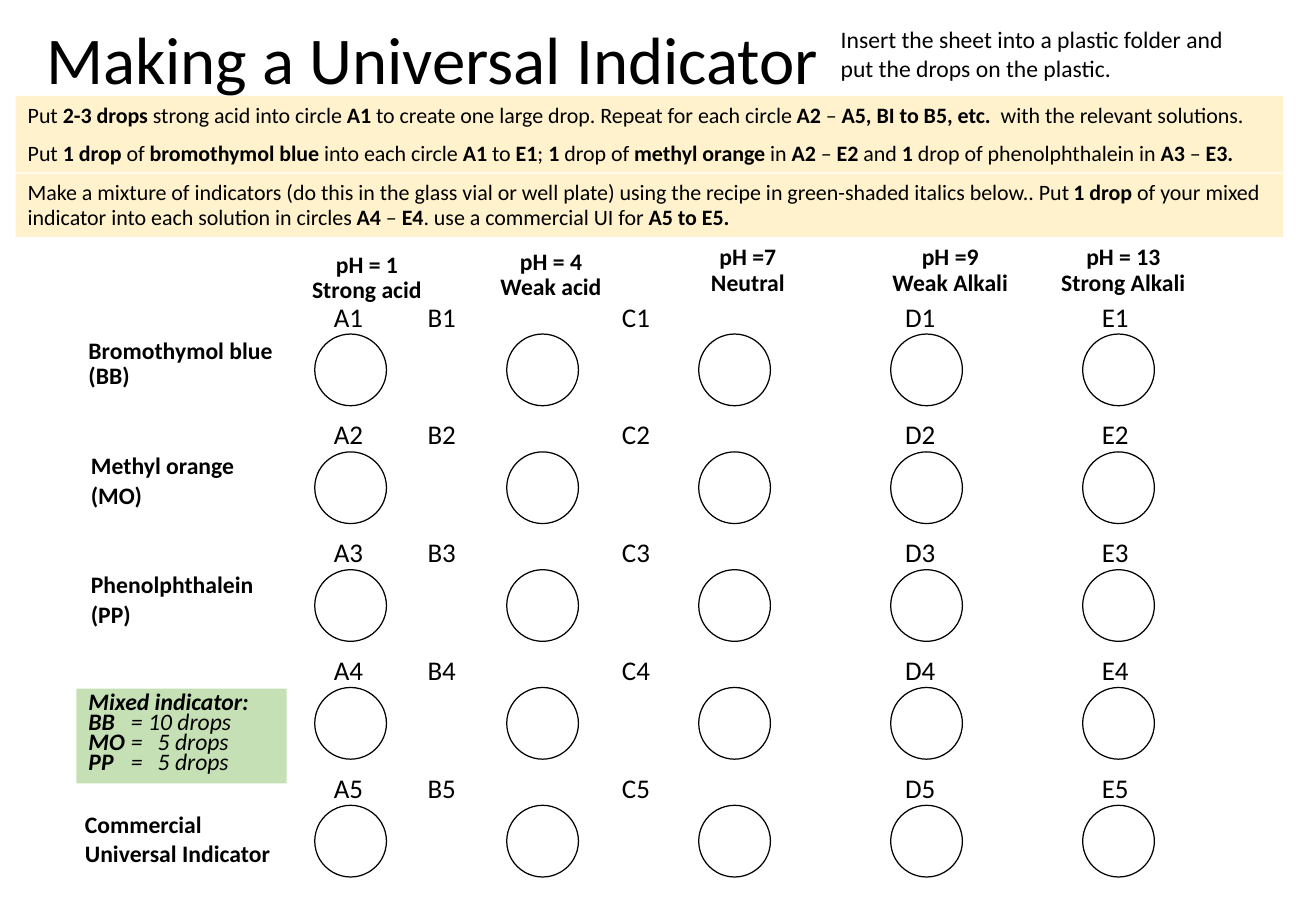
from lxml import etree
from pptx import Presentation
from pptx.dml.color import RGBColor
from pptx.enum.shapes import MSO_SHAPE as Shape
from pptx.enum.text import MSO_ANCHOR as Anchor, MSO_AUTO_SIZE as AutoSize, PP_ALIGN as Align
from pptx.oxml.ns import qn
from pptx.util import Inches, Pt

COLORS = {"ink": "000000", "paper": "FFFFFF", "band": "FFF2CC", "recipe": "C5E0B4"}
FONT = "Calibri"

# Paragraph formats
PLAIN = {}
TIGHT = {"line_spacing": Pt(15), "space_before": Pt(2), "space_after": Pt(2)}
HEADING = {**TIGHT, "alignment": Align.CENTER}
COMPACT = {"line_spacing": Pt(12), "space_before": Pt(3), "space_after": Pt(3)}

# Wording: ** switches bold on and off
INSTRUCTIONS = [
    (0, 0.32, PLAIN,
     "Put **2-3 drops** strong acid into circle **A1** to create one large drop. "
     "Repeat for each circle **A2** – **A5, BI to B5, etc. ** with the relevant solutions."),
    (0.32, 0.31, TIGHT,
     "Put **1 drop** of **bromothymol blue** into each circle **A1** to **E1**; **1** drop of "
     "**methyl orange** in **A2** – **E2** and **1 **drop of phenolphthalein in **A3** – **E3.**"),
    (0.64, 0.52, TIGHT,
     "Make a mixture of indicators (do this in the glass vial or well plate) using the recipe "
     "in green-shaded italics below.. Put **1 drop** of your mixed indicator into each solution "
     "in circles **A4** – **E4**. use a commercial UI for **A5 to E5.**"),
]
SOLUTIONS = [
    (2.2, 2.03, 1.64, "**pH = 1\nStrong acid**"),
    (3.87, 2.01, 1.33, "**pH = 4\nWeak acid**"),
    (5.49, 1.97, 1.33, "**pH =7\nNeutral**"),
    (7.0, 1.97, 1.64, "**pH =9\nWeak Alkali**"),
    (8.21, 1.97, 2.07, "**pH = 13\nStrong Alkali**"),
]
INDICATORS = [
    ((0.63, 2.74, 1.86, 0.53), TIGHT, ["**Bromothymol blue (BB)**"]),
    ((0.65, 3.73, 1.73, 0.55), COMPACT, ["**Methyl orange**", "**(MO)**"]),
    ((0.65, 4.71, 1.73, 0.55), COMPACT, ["**Phenolphthalein**", "**(PP)**"]),
    ((0.6, 6.62, 1.73, 0.57), PLAIN, ["**Commercial Universal Indicator**"]),
]
RECIPE = ("**Mixed indicator:\nBB**\t= 10 drops\n**MO**\t=\t5 drops\n"
          "**PP**\t=\t5 drops")
RECIPE_TABS = (0.35, 0.57)
LABEL_TABS = (0.77, 2.37, 4.7, 6.32)


def set_attributes(target, values):
    for name, value in values.items():
        setattr(target, name, value)


def set_tabs(paragraph, positions):
    tab_list = etree.SubElement(paragraph._p.get_or_add_pPr(), qn("a:tabLst"))
    for position in positions:
        etree.SubElement(tab_list, qn("a:tab"), pos=str(Inches(position)), algn="l")


def write(paragraph, text, size, layout, tabs=(), italic=False):
    set_attributes(paragraph, layout)
    if tabs:
        set_tabs(paragraph, tabs)
    for index, part in enumerate(text.split("**")):
        for line_number, line in enumerate(part.split("\n")):
            if line_number:
                paragraph.add_line_break()
            if line:
                run = paragraph.add_run()
                run.text = line
                set_attributes(run.font, {"name": FONT, "size": Pt(size),
                                          "bold": index % 2 == 1, "italic": italic})
                run.font.color.rgb = RGBColor.from_string(COLORS["ink"])


def add_text(slide, box, paragraphs, size, layout=PLAIN, fill=None, **options):
    place = [Inches(value) for value in box]
    if fill:
        shape = slide.shapes.add_shape(Shape.RECTANGLE, *place)
        shape.shadow.inherit = False
        shape.fill.solid()
        shape.fill.fore_color.rgb = RGBColor.from_string(COLORS[fill])
        shape.line.fill.background()
    else:
        shape = slide.shapes.add_textbox(*place)
    frame = shape.text_frame
    set_attributes(frame, {"word_wrap": True, "vertical_anchor": Anchor.TOP,
                           "auto_size": AutoSize.SHAPE_TO_FIT_TEXT})
    for index, text in enumerate(paragraphs):
        paragraph = frame.add_paragraph() if index else frame.paragraphs[0]
        write(paragraph, text, size, {"alignment": Align.LEFT, **layout}, **options)


def add_header(slide, left, top):
    title = slide.shapes.title
    set_attributes(title, {"left": Inches(left), "top": Inches(top),
                           "width": Inches(6.72), "height": Inches(0.7)})
    set_attributes(title.text_frame, {"vertical_anchor": Anchor.MIDDLE, "word_wrap": True,
                                      "auto_size": AutoSize.NONE})
    write(title.text_frame.paragraphs[0], "Making a Universal Indicator", 39.6,
          {"alignment": Align.LEFT, "line_spacing": 0.9})
    add_text(slide, (left + 6.54, top - 0.01, 3.4, 0.57),
             ["Insert the sheet into a plastic folder and put the drops on the plastic."], 14)


def add_instructions(slide, left, top, width):
    for offset, height, layout, text in INSTRUCTIONS:
        add_text(slide, (left, top + offset, width, height), [text], 13, layout, "band")


def add_headings(slide):
    for left, top, width, text in SOLUTIONS:
        add_text(slide, (left, top, width, 0.54), [text], 14, HEADING)
    for box, layout, paragraphs in INDICATORS:
        add_text(slide, box, paragraphs, 14, layout)
    add_text(slide, (0.63, 5.67, 1.73, 0.78), [RECIPE], 14, COMPACT, "recipe",
             tabs=RECIPE_TABS, italic=True)


def add_drop_row(slide, left, top, number):
    """One row of five circles under its line of labels."""
    row = slide.shapes.add_group_shape()
    for column in range(5):
        circle = row.shapes.add_shape(Shape.OVAL, Inches(left + column * 1.58), Inches(top),
                                      Inches(0.59), Inches(0.59))
        circle.shadow.inherit = False
        circle.fill.solid()
        circle.fill.fore_color.rgb = RGBColor.from_string(COLORS["paper"])
        circle.line.color.rgb = RGBColor.from_string(COLORS["ink"])
        circle.line.width = Pt(0.75)
    labels = "\t".join(f"{letter}{number}" for letter in "ABCDE")
    add_text(slide, (left + 0.06, top - 0.27, 7.26, 0.32), [labels], 16, TIGHT,
             tabs=LABEL_TABS)


def main():
    presentation = Presentation()
    presentation.slide_width, presentation.slide_height = Inches(10.83), Inches(7.5)
    slide = presentation.slides.add_slide(presentation.slide_layouts[5])
    add_header(slide, 0.28, 0.17)
    add_instructions(slide, 0.13, 0.79, 10.43)
    add_headings(slide)
    for row in range(5):
        add_drop_row(slide, 2.59, 2.75 + row * 0.97, row + 1)
    presentation.save("out.pptx")


if __name__ == "__main__":
    main()
